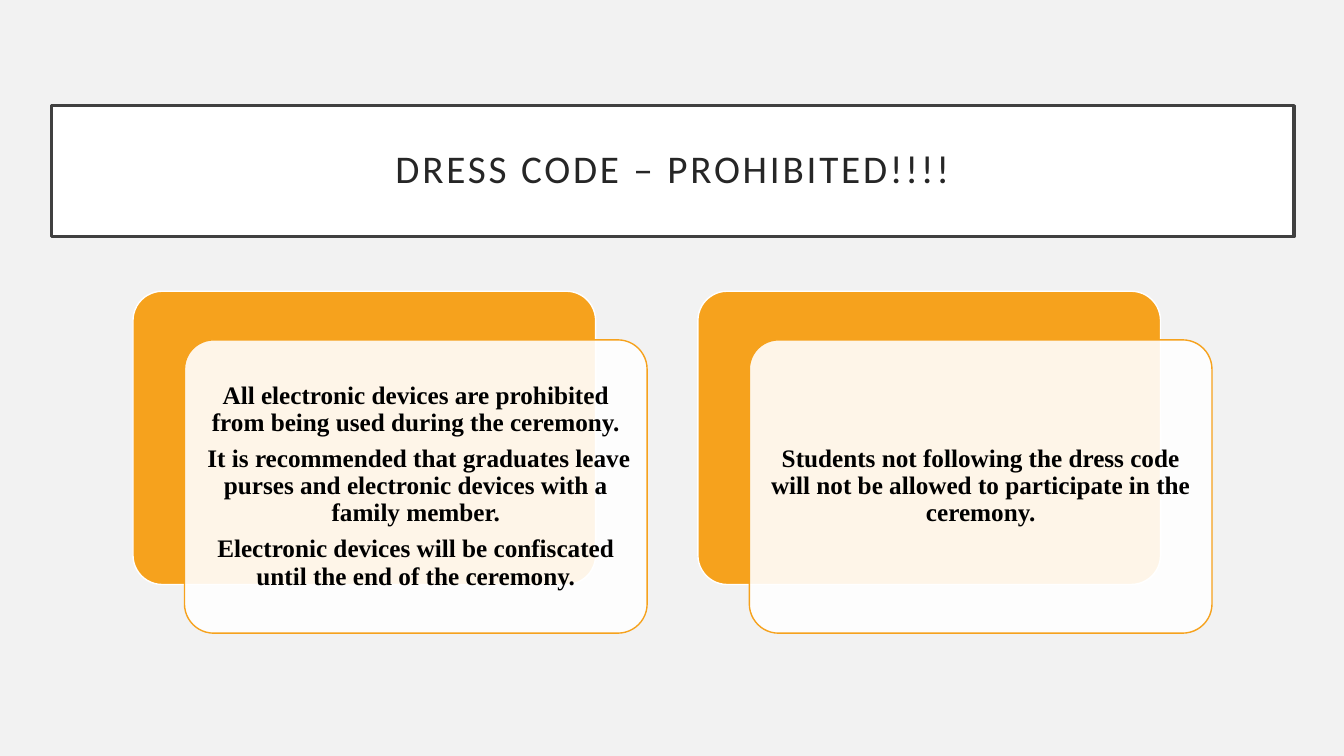
from dataclasses import dataclass

from lxml import etree
from pptx import Presentation
from pptx import util as u
from pptx.dml.color import RGBColor
from pptx.enum import shapes, text
from pptx.oxml import ns

BACKGROUND = RGBColor(0xF2, 0xF2, 0xF2)
WHITE = RGBColor(0xFF, 0xFF, 0xFF)
ORANGE = RGBColor(0xF6, 0xA2, 0x1D)
BORDER = RGBColor(0x40, 0x40, 0x40)
TITLE_INK = RGBColor(0x26, 0x26, 0x26)
BLACK = RGBColor(0, 0, 0)

# Card layout, in points
CARD_LEFT, CARD_TOP = 95, 208
CARD_WIDTH, CARD_HEIGHT = 330.5, 209.5
CARD_PITCH = 403.5
FRONT_SHIFT_X, FRONT_SHIFT_Y = 36.75, 34.75


@dataclass
class Box:
    left: float
    top: float
    width: float
    height: float
    fill: RGBColor
    line: RGBColor
    line_width: float = 1
    kind: shapes.MSO_SHAPE = shapes.MSO_SHAPE.ROUNDED_RECTANGLE


@dataclass
class TextStyle:
    font: str
    size: float
    color: RGBColor
    inset: float
    bold: bool = False
    space_after: float = 0


TITLE_STYLE = TextStyle("Calibri", 28, TITLE_INK, inset=14.4)
CARD_STYLE = TextStyle("Times New Roman", 18, BLACK, inset=5,
                       bold=True, space_after=6.3)

CARDS = [
    [
        "All electronic devices are prohibited from being used during the ceremony.",
        " It is recommended that graduates leave purses and electronic devices "
        "with a family member.",
        "Electronic devices will be confiscated until the end of the ceremony.",
    ],
    ["Students not following the dress code will not be allowed to participate "
     "in the ceremony."],
]


def draw_box(page, box: Box):
    shape = page.shapes.add_shape(box.kind, u.Pt(box.left), u.Pt(box.top),
                                  u.Pt(box.width), u.Pt(box.height))
    shape.shadow.inherit = False
    shape.fill.solid()
    shape.fill.fore_color.rgb = box.fill
    shape.line.color.rgb = box.line
    shape.line.width = u.Pt(box.line_width)
    if box.kind == shapes.MSO_SHAPE.ROUNDED_RECTANGLE:
        shape.adjustments[0] = 0.1
    return shape


def write_text(shape, lines: list[str], style: TextStyle) -> None:
    frame = shape.text_frame
    frame.word_wrap = True
    frame.vertical_anchor = text.MSO_ANCHOR.MIDDLE
    frame.margin_left = frame.margin_right = u.Pt(style.inset)
    frame.margin_top = frame.margin_bottom = u.Pt(style.inset)
    frame.text = "\n".join(lines)
    for para in frame.paragraphs:
        para.alignment = text.PP_ALIGN.CENTER
        para.line_spacing = 0.9
        para.space_after = u.Pt(style.space_after)
        for span in para.runs:
            span.font.name = style.font
            span.font.size = u.Pt(style.size)
            span.font.bold = style.bold
            span.font.color.rgb = style.color


def set_opacity(shape, percent: int) -> None:
    color = shape.fill._xPr.find(ns.qn("a:solidFill"))[0]
    etree.SubElement(color, ns.qn("a:alpha")).set("val", str(percent * 1000))


def draw_title(page) -> None:
    shape = draw_box(page, Box(36.75, 75.5, 887.75, 93.5, WHITE, BORDER, 2.5,
                               shapes.MSO_SHAPE.RECTANGLE))
    write_text(shape, ["DRESS CODE – PROHIBITED!!!!"], TITLE_STYLE)
    span = shape.text_frame.paragraphs[0].runs[0]
    span.font._element.set("spc", "200")  # letter spacing of 2 pt


def draw_card(page, left: float, lines: list[str]) -> None:
    draw_box(page, Box(left, CARD_TOP, CARD_WIDTH, CARD_HEIGHT, ORANGE, WHITE))
    front = draw_box(page, Box(left + FRONT_SHIFT_X, CARD_TOP + FRONT_SHIFT_Y,
                               CARD_WIDTH, CARD_HEIGHT, WHITE, ORANGE))
    set_opacity(front, 90)
    write_text(front, lines, CARD_STYLE)


def main() -> None:
    deck = Presentation()
    deck.slide_width, deck.slide_height = u.Pt(960), u.Pt(540)
    page = deck.slides.add_slide(deck.slide_layouts[6])
    page.background.fill.solid()
    page.background.fill.fore_color.rgb = BACKGROUND

    draw_title(page)
    for index, lines in enumerate(CARDS):
        draw_card(page, CARD_LEFT + index * CARD_PITCH, lines)

    deck.save("out.pptx")


if __name__ == "__main__":
    main()
